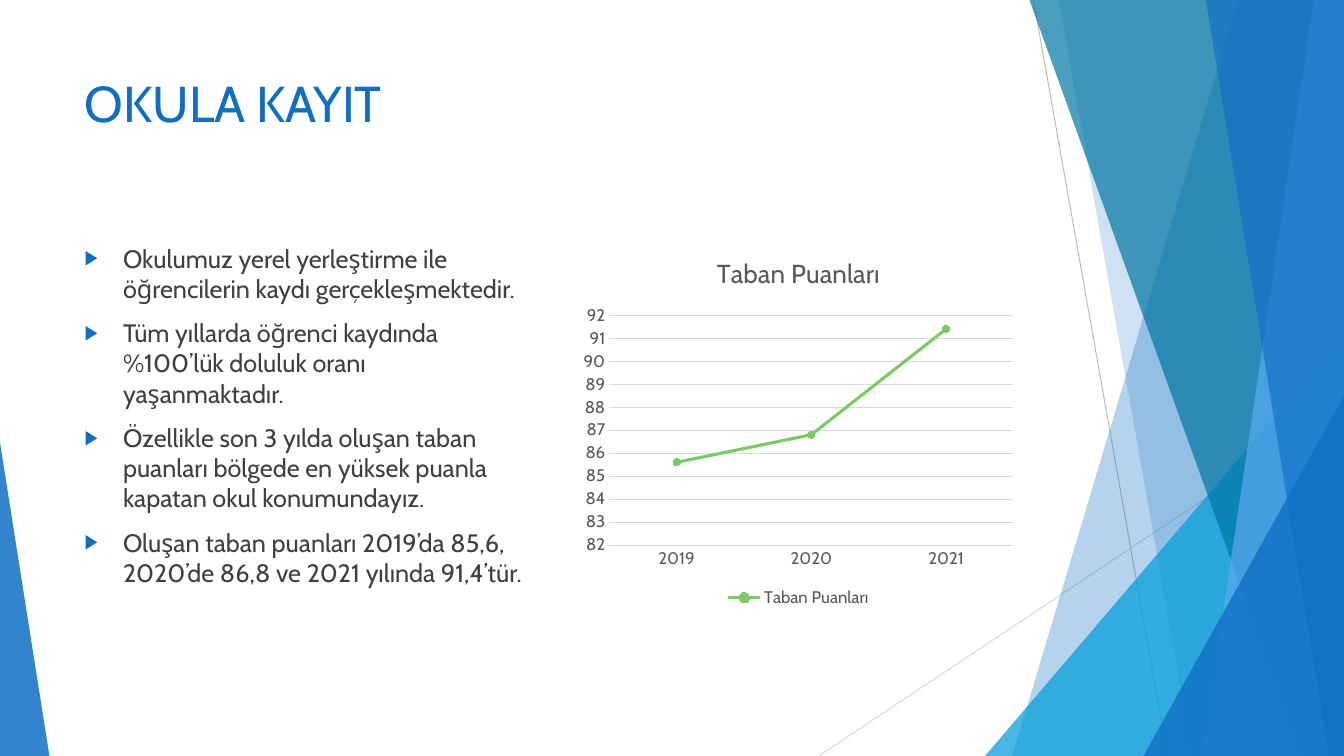
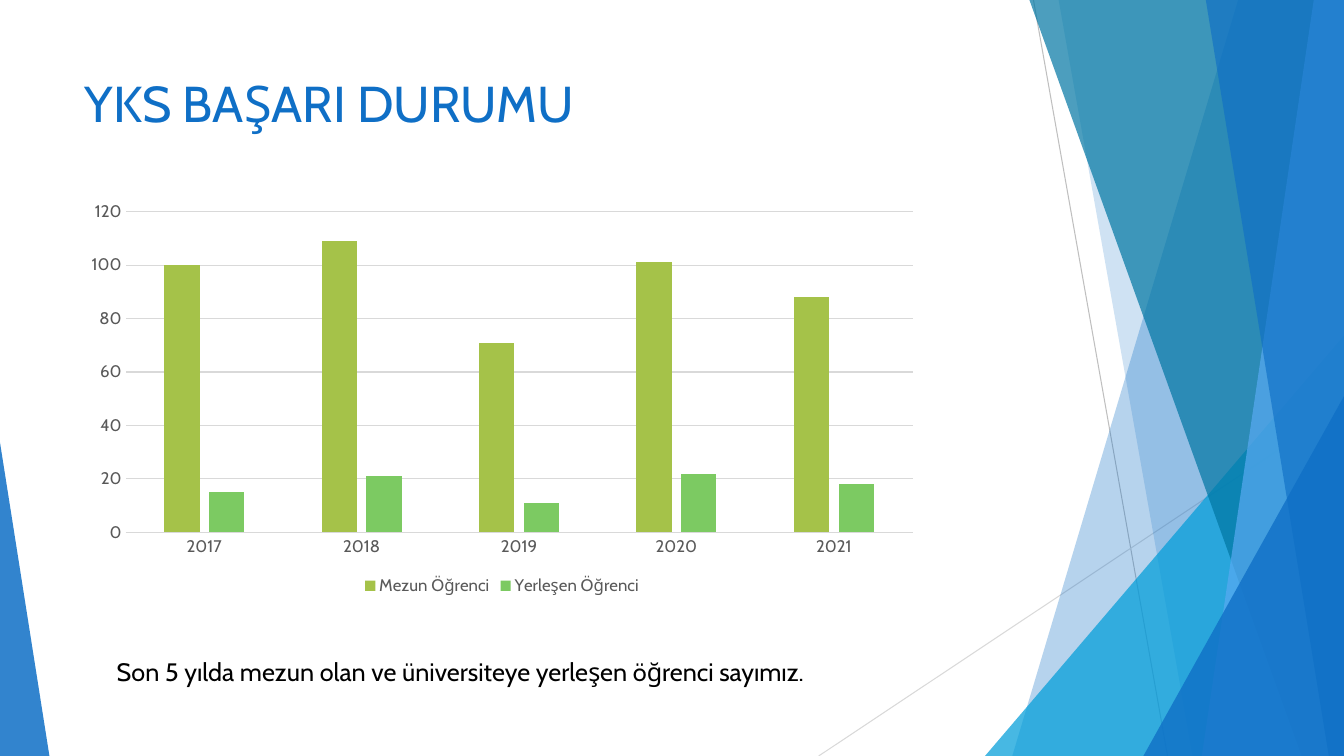
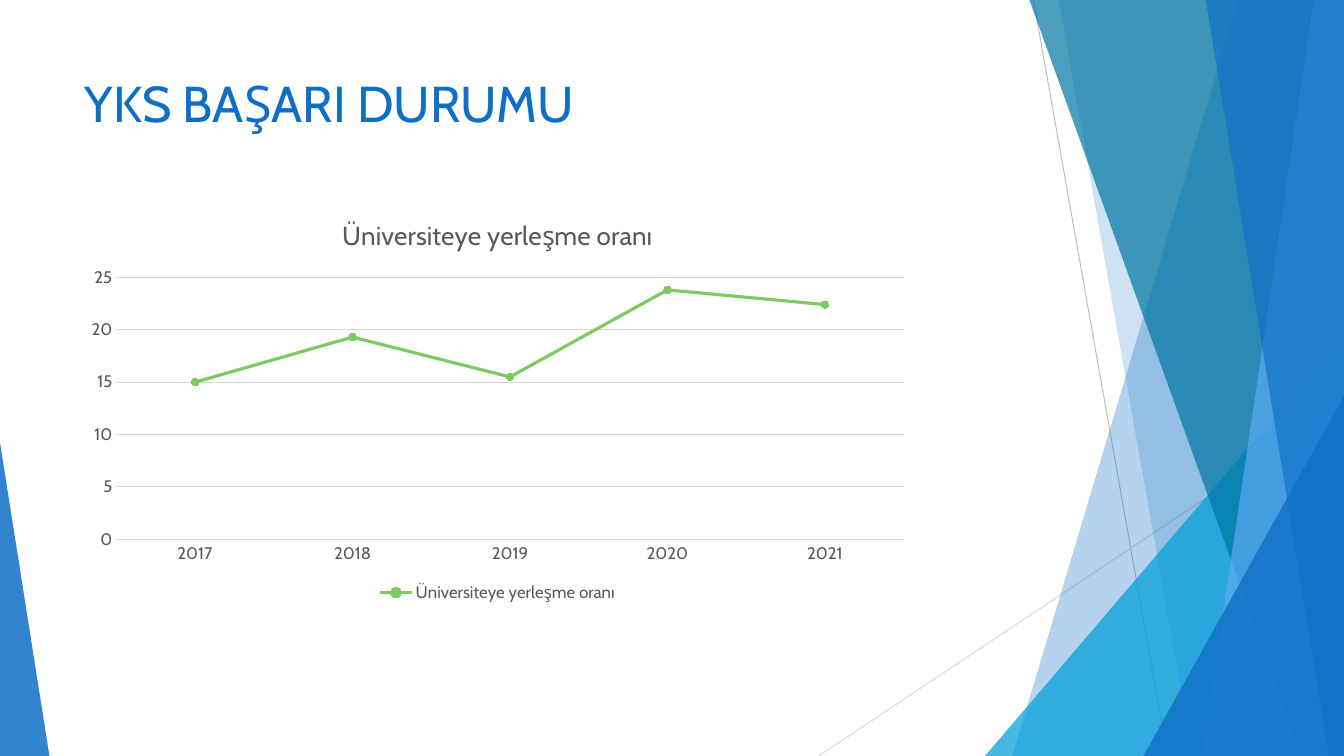
from pptx import Presentation
from pptx.chart.data import CategoryChartData
from pptx.dml.color import RGBColor
from pptx.enum.chart import XL_CHART_TYPE, XL_LEGEND_POSITION, XL_MARKER_STYLE, XL_TICK_MARK
from pptx.enum.shapes import MSO_CONNECTOR, MSO_SHAPE, PP_PLACEHOLDER
from pptx.enum.text import MSO_ANCHOR, MSO_AUTO_SIZE
from pptx.oxml import parse_xml
from pptx.oxml.ns import nsdecls, qn
from pptx.util import Inches, Pt

LINE, COLUMN = XL_CHART_TYPE.LINE_MARKERS, XL_CHART_TYPE.COLUMN_CLUSTERED
NO_TICK, CIRCLE, BOTTOM = XL_TICK_MARK.NONE, XL_MARKER_STYLE.CIRCLE, XL_LEGEND_POSITION.BOTTOM
STRAIGHT, TRIANGLE = MSO_CONNECTOR.STRAIGHT, MSO_SHAPE.ISOSCELES_TRIANGLE
TOP, FIT_SHAPE, NO_FIT = MSO_ANCHOR.TOP, MSO_AUTO_SIZE.SHAPE_TO_FIT_TEXT, MSO_AUTO_SIZE.NONE
TITLE, BODY = PP_PLACEHOLDER.TITLE, PP_PLACEHOLDER.BODY
TITLE_AND_CONTENT, TITLE_ONLY = 1, 5

# Theme
WIDTH, HEIGHT, MARGIN = 13.33, 7.5, 0.74
THEME = {
    "font": "Cabin", "blue": "0F6FC6", "sky": "59AAF2", "cyan": "009DD9", "teal": "0076A3",
    "green": "7CCA62", "lime": "A5C249", "body": "404040", "chart": "595959",
    "grid": "D9D9D9", "ray": "BFBFBF", "caption": "000000",
    "title_size": 36, "body_size": 18, "chart_title_size": 18.6, "chart_size": 12,
}
TITLE_BOX = (MARGIN, 0.67, 9.4, 1.44)
BODY_BOX = (MARGIN, 2.36, 4.63, 4.24)

# Decoration: rays as from and to points, blades as top x and bottom x,
# triangles as left, top, width and apex share
RAYS = [((10.25, 0), (11.58, HEIGHT), "ray"), ((WIDTH, 4.03), (8.12, HEIGHT), "grid")]
PANELS = [
    ("blade", (12.28, 10.04), "blue", 30),
    ("blade", (10.5, 11.83), "blue", 20),
    ("triangle", (9.77, 3.33, 3.56, 1), "cyan", 72),
    ("blade", (10.21, 12.91), "teal", 70),
    ("blade", (13.03, 11.92), "sky", 70),
    ("blade", (11.96, 13.18), "blue", 65),
    ("triangle", (11.34, 3.93, 1.99, 1), "blue", 80),
    ("triangle", (0, 4.39, 0.49, 0), "blue", 85),
]

# Content
YEARS = ["2017", "2018", "2019", "2020", "2021"]
SLIDES = [
    {
        "title": "OKULA KAYIT",
        "bullets": [
            "Okulumuz yerel yerleştirme ile öğrencilerin kaydı gerçekleşmektedir.",
            "Tüm yıllarda öğrenci kaydında %100’lük doluluk oranı yaşanmaktadır.",
            "Özellikle son 3 yılda oluşan taban puanları bölgede en yüksek puanla "
            "kapatan okul konumundayız.",
            "Oluşan taban puanları 2019’da 85,6, 2020’de 86,8 ve 2021 yılında 91,4’tür.",
        ],
        "chart": {
            "type": LINE, "box": (5.7, 2.36, 4.44, 3.71), "scale": (82, 92, 1),
            "title": "Taban Puanları", "categories": YEARS[2:],
            "series": [("Taban Puanları", [85.6, 86.8, 91.4], "green")],
        },
    },
    {
        "title": "YKS BAŞARI DURUMU",
        "chart": {
            "type": COLUMN, "box": (MARGIN, 1.92, 8.48, 4.03), "scale": (0, 120, 20),
            "categories": YEARS,
            "series": [
                ("Mezun Öğrenci", [100, 109, 71, 101, 88], "lime"),
                ("Yerleşen Öğrenci", [15, 21, 11, 22, 18], "green"),
            ],
        },
        "caption": ("Son 5 yılda mezun olan ve üniversiteye yerleşen öğrenci sayımız.",
                    (1.06, 6.46, 7.54, 0.4)),
    },
    {
        "title": "YKS BAŞARI DURUMU",
        "chart": {
            "type": LINE, "box": (MARGIN, 1.97, 8.39, 4.05), "scale": (0, 25, 5),
            "title": "Üniversiteye yerleşme oranı", "categories": YEARS,
            "series": [("Üniversiteye yerleşme oranı", [15, 19.3, 15.5, 23.8, 22.4], "green")],
        },
    },
]


def color(name):
    return RGBColor.from_string(THEME[name])


def inches(values):
    return [Inches(value) for value in values]


def set_values(target, values):
    for name, value in values.items():
        setattr(target, name, value)


def format_font(font, color_name, size_name):
    set_values(font, {"name": THEME["font"], "size": Pt(THEME[size_name]), "bold": False})
    font.color.rgb = color(color_name)


def format_line(line, color_name, width=0.75):
    line.color.rgb = color(color_name)
    line.width = Pt(width)


def fill_solid(fill, color_name):
    fill.solid()
    fill.fore_color.rgb = color(color_name)


# Master: title and list styles
def set_text_style(master, style, size_name, color_name, attributes, paragraph_xml):
    level = parse_xml(
        f'<a:lvl1pPr {nsdecls("a")} algn="l" {attributes}>{paragraph_xml}'
        f'<a:defRPr sz="{THEME[size_name] * 100}" b="0" kern="1200">'
        f'<a:solidFill><a:srgbClr val="{THEME[color_name]}"/></a:solidFill>'
        f'<a:latin typeface="{THEME["font"]}"/></a:defRPr></a:lvl1pPr>'
    )
    parent = master.element.find(f'{qn("p:txStyles")}/{qn(style)}')
    parent.replace(parent.find(qn("a:lvl1pPr")), level)


def style_master(master):
    for kind, box in ((TITLE, TITLE_BOX), (BODY, BODY_BOX)):
        placeholder = master.placeholders.get(kind)
        set_values(placeholder, dict(zip(("left", "top", "width", "height"), inches(box))))
        set_values(placeholder.text_frame, {"vertical_anchor": TOP, "auto_size": NO_FIT})
    set_text_style(master, "p:titleStyle", "title_size", "blue", "", "<a:buNone/>")
    indent = Inches(0.38)
    set_text_style(
        master, "p:bodyStyle", "body_size", "body", f'marL="{indent}" indent="-{indent}"',
        '<a:spcBef><a:spcPts val="1000"/></a:spcBef>'
        f'<a:buClr><a:srgbClr val="{THEME["blue"]}"/></a:buClr><a:buSzPct val="80000"/>'
        '<a:buFont typeface="Arial"/><a:buChar char="▶"/>',
    )


# Master: rays, blades and triangles, drawn as a group and moved behind the placeholders
def add_panel(shapes, kind, geometry):
    if kind == "blade":
        top_x, bottom_x = geometry
        start, *corners = [inches(point) for point in (
            (top_x, 0), (WIDTH, 0), (WIDTH, HEIGHT), (bottom_x, HEIGHT))]
        builder = shapes.build_freeform(*start)
        builder.add_line_segments(corners, close=True)
        return builder.convert_to_shape()
    left, top, width, apex = geometry
    shape = shapes.add_shape(TRIANGLE, *inches((left, top, width, HEIGHT - top)))
    shape.adjustments[0] = apex
    return shape


def decorate_master(master, slide):
    group = slide.shapes.add_group_shape()
    for start, end, color_name in RAYS:
        ray = group.shapes.add_connector(STRAIGHT, *inches(start + end))
        format_line(ray.line, color_name)
        ray.element.spPr.append(parse_xml(f'<a:effectLst {nsdecls("a")}/>'))
    for kind, geometry, color_name, opacity in PANELS:
        shape = add_panel(group.shapes, kind, geometry)
        shape.shadow.inherit = False
        shape.line.fill.background()
        fill_solid(shape.fill, color_name)
        alpha = parse_xml(f'<a:alpha {nsdecls("a")} val="{opacity * 1000}"/>')
        next(shape.element.iter(qn("a:srgbClr"))).append(alpha)
    for number, properties in enumerate(group.element.iter(qn("p:cNvPr")), 100):
        properties.set("id", str(number))
    master.shapes.element.insert(2, group.element)


# Charts
def format_axes(chart, scale):
    for axis in (chart.category_axis, chart.value_axis):
        set_values(axis, {"major_tick_mark": NO_TICK, "minor_tick_mark": NO_TICK})
        format_font(axis.tick_labels.font, "chart", "chart_size")
    format_line(chart.category_axis.format.line, "grid")
    axis = chart.value_axis
    set_values(axis, dict(zip(("minimum_scale", "maximum_scale", "major_unit"), scale)))
    axis.format.line.fill.background()
    format_line(axis.major_gridlines.format.line, "grid")


def format_series(series, chart_type, color_name):
    if chart_type == COLUMN:
        fill_solid(series.format.fill, color_name)
        return
    series.smooth = False
    format_line(series.format.line, color_name, 2.25)
    set_values(series.marker, {"style": CIRCLE, "size": 5})
    fill_solid(series.marker.format.fill, color_name)
    format_line(series.marker.format.line, color_name)


def add_chart(slide, content):
    data = CategoryChartData()
    data.categories = content["categories"]
    for name, values, _ in content["series"]:
        data.add_series(name, values)
    chart = slide.shapes.add_chart(content["type"], *inches(content["box"]), data).chart
    format_font(chart.font, "chart", "chart_size")
    chart.has_title = "title" in content
    if chart.has_title:
        frame = chart.chart_title.text_frame
        frame.text = content["title"]
        format_font(frame.paragraphs[0].runs[0].font, "chart", "chart_title_size")
    chart.has_legend = True
    set_values(chart.legend, {"position": BOTTOM, "include_in_layout": False})
    format_font(chart.legend.font, "chart", "chart_size")
    format_axes(chart, content["scale"])
    plot = chart.plots[0]
    plot.vary_by_categories = False
    if content["type"] == COLUMN:
        set_values(plot, {"gap_width": 219, "overlap": -27})
    for series, (_, _, color_name) in zip(plot.series, content["series"]):
        format_series(series, content["type"], color_name)


def add_caption(slide, text, box):
    frame = slide.shapes.add_textbox(*inches(box)).text_frame
    set_values(frame, {"text": text, "word_wrap": False, "auto_size": FIT_SHAPE})
    format_font(frame.paragraphs[0].runs[0].font, "caption", "body_size")


def add_slide(presentation, content):
    layout = TITLE_AND_CONTENT if "bullets" in content else TITLE_ONLY
    slide = presentation.slides.add_slide(presentation.slide_layouts[layout])
    slide.shapes.title.text = content["title"]
    if "bullets" in content:
        slide.placeholders[1].text = "\n".join(content["bullets"])
    add_chart(slide, content["chart"])
    if "caption" in content:
        add_caption(slide, *content["caption"])


def main():
    presentation = Presentation()
    presentation.slide_width, presentation.slide_height = inches((WIDTH, HEIGHT))
    master = presentation.slide_master
    style_master(master)
    for content in SLIDES:
        add_slide(presentation, content)
    decorate_master(master, presentation.slides[0])
    presentation.save("out.pptx")


if __name__ == "__main__":
    main()
